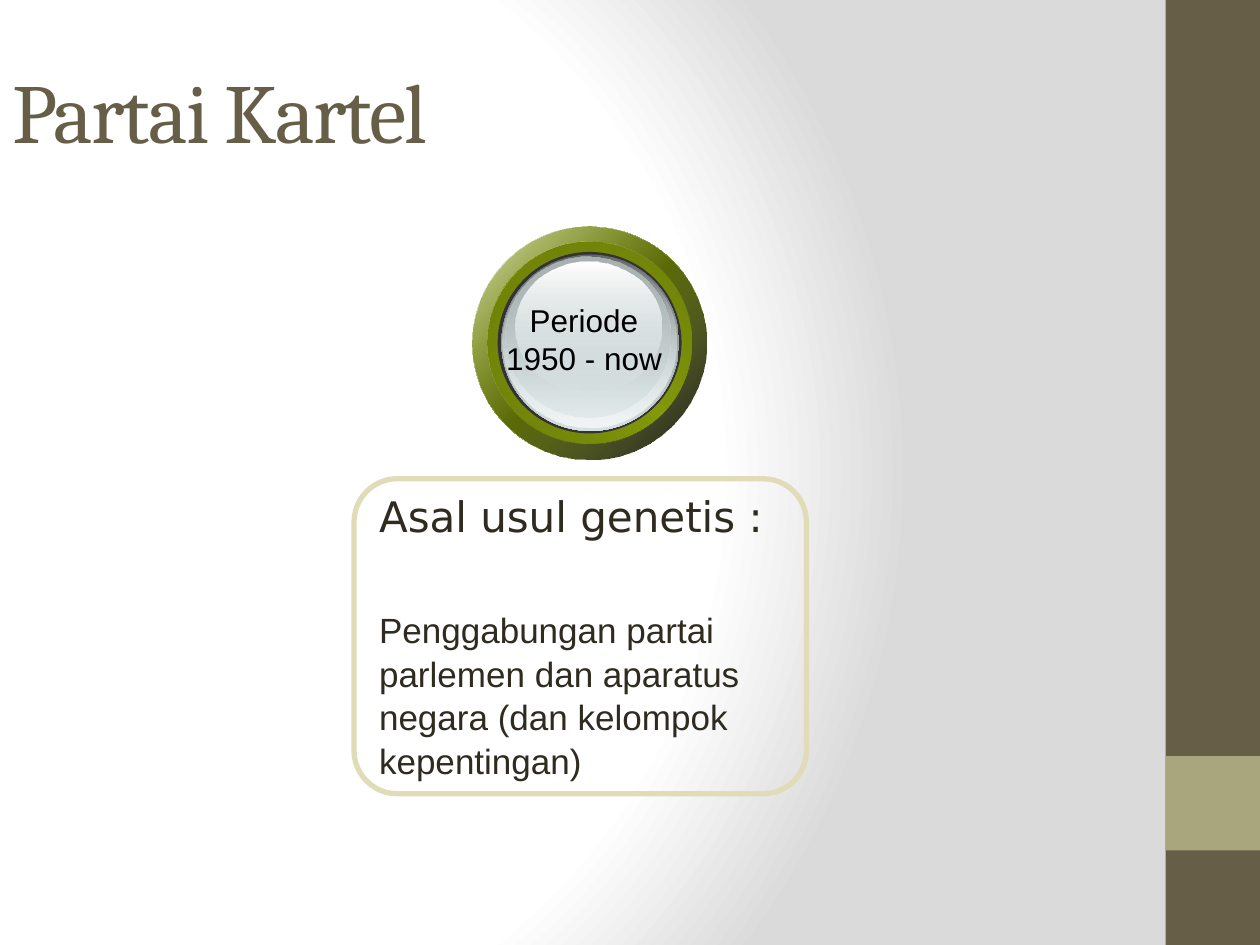
from lxml.etree import SubElement
from pptx import Presentation
from pptx.dml.color import RGBColor
from pptx.enum.shapes import MSO_SHAPE
from pptx.enum.text import MSO_ANCHOR, PP_ALIGN
from pptx.oxml.ns import qn
from pptx.util import Inches, Pt

HUES = {
    "brown": "675E47", "sage": "A9A57C", "cream": "DFDCB7", "ink": "2F2B20",
    "white": "FFFFFF", "black": "000000", "grey": "DADADA", "coal": "333333",
    "green": "849A0A", "moss": "657608", "leaf": "6C7E08", "slate": "636869",
    "ice": "D6E1E2", "frost": "F1F5F5", "steel": "AAB2B3",
}


def blend(host, stops, angle=None):
    old = host.find(qn("a:solidFill"))
    grad = old.makeelement(qn("a:gradFill"), {"rotWithShape": "1"})
    host.replace(old, grad)
    items = SubElement(grad, qn("a:gsLst"))
    for spot, hue, alpha in stops:
        stop = SubElement(items, qn("a:gs"), pos=str(spot * 1000))
        tint = SubElement(stop, qn("a:srgbClr"), val=HUES[hue])
        if alpha < 100:
            SubElement(tint, qn("a:alpha"), val=str(alpha * 1000))
    if angle is not None:
        SubElement(grad, qn("a:lin"), ang=str(angle * 60000), scaled="0")
    return grad


def write(para, text, face, size, hue, style):
    run = para.add_run()
    run.text = text
    run.font.color.rgb = RGBColor.from_string(HUES[hue])
    for name, value in {"name": face, "size": Pt(size)}.items():
        setattr(run.font, name, value)
    for name, value in style.items():
        setattr(para, name, value)
    return run


deck = Presentation()
deck.slide_width, deck.slide_height = Inches(10), Inches(7.5)
slide = deck.slides.add_slide(deck.slide_layouts[6])

slide.background.fill.solid()
back = slide.element.find(".//" + qn("p:bgPr"))
glow = blend(back, [(0, "white", 100), (75, "white", 100), (100, "grey", 100)])
round_path = SubElement(glow, qn("a:path"), {"path": "circle"})
SubElement(round_path, qn("a:fillToRect"), l="20000", t="50000", r="100000", b="50000")

for top, height, hue in [(0, 7.5, "brown"), (6, 0.75, "sage")]:
    band = slide.shapes.add_shape(
        MSO_SHAPE.RECTANGLE, Inches(9.25), Inches(top), Inches(0.75), Inches(height))
    band.shadow.inherit = False
    band.fill.solid()
    band.fill.fore_color.rgb = RGBColor.from_string(HUES[hue])
    band.line.fill.background()

card = slide.shapes.add_shape(
    MSO_SHAPE.ROUNDED_RECTANGLE, Inches(2.81), Inches(3.8), Inches(3.59), Inches(2.5))
card.adjustments[0] = 0.137
card.shadow.inherit = False
card.fill.background()
card.line.color.rgb = RGBColor.from_string(HUES["cream"])
card.line.width = Pt(3)
frame = card.text_frame
for name, value in {"word_wrap": True, "vertical_anchor": MSO_ANCHOR.MIDDLE}.items():
    setattr(frame, name, value)
left = {"alignment": PP_ALIGN.LEFT}
write(frame.paragraphs[0], "Asal usul genetis :", "DejaVu Sans", 24, "ink", left)
write(frame.add_paragraph(),
      "Penggabungan partai parlemen dan aparatus negara (dan kelompok kepentingan)",
      "Arial", 20, "ink", {**left, "space_before": Pt(37.5), "line_spacing": 1.04})

title = slide.shapes.add_textbox(Inches(0), Inches(0.25), Inches(9), Inches(1.25))
frame = title.text_frame
for name, value in {"word_wrap": True, "vertical_anchor": MSO_ANCHOR.MIDDLE}.items():
    setattr(frame, name, value)
run = write(frame.paragraphs[0], "Partai Kartel", "Cambria", 48, "brown", left)
run.font.element.set("spc", "-100") if hasattr(run.font, "element") else run._r.get_or_add_rPr().set("spc", "-100")

outer, inner = (3.75, 1.8, 1.86, 1.85), (3.87, 1.92, 1.62, 1.6)
rings = [
    (outer, 45, [(0, "white", 100), (50, "green", 100), (100, "white", 100)]),
    (outer, 45, [(0, "green", 32), (100, "black", 90)]),
    (inner, 315, [(0, "moss", 100), (50, "green", 100), (100, "moss", 100)]),
    (inner, 45, [(0, "leaf", 100), (100, "green", 0)]),
    ((3.95, 2, 1.46, 1.44), 0, [(0, "coal", 100), (100, "coal", 100)]),
    ((3.98, 2.02, 1.41, 1.4), 90, [(0, "slate", 100), (100, "ice", 100)]),
    ((3.99, 2.03, 1.38, 1.36), 90, [(0, "ice", 0), (100, "frost", 100)]),
    ((4.01, 2.04, 1.31, 1.27), 90, [(0, "steel", 100), (100, "ice", 48)]),
    ((4.09, 2.08, 1.16, 1.03), 90, [(0, "white", 100), (100, "ice", 38)]),
]
for box, angle, stops in rings:
    ring = slide.shapes.add_shape(MSO_SHAPE.OVAL, *map(Inches, box))
    ring.shadow.inherit = False
    ring.line.fill.background()
    ring.fill.solid()
    if stops[0][1] == stops[-1][1] == "coal":
        ring.fill.fore_color.rgb = RGBColor.from_string(HUES["coal"])
    else:
        blend(ring.element.spPr, stops, angle)

label = slide.shapes.add_textbox(Inches(3.91), Inches(2.34), Inches(1.45), Inches(0.71))
frame = label.text_frame
frame.word_wrap = False
center = {"alignment": PP_ALIGN.CENTER}
write(frame.paragraphs[0], "Periode", "Arial", 18, "black", center)
write(frame.add_paragraph(), "1950 - now", "Arial", 18, "black", center)

deck.save("out.pptx")
